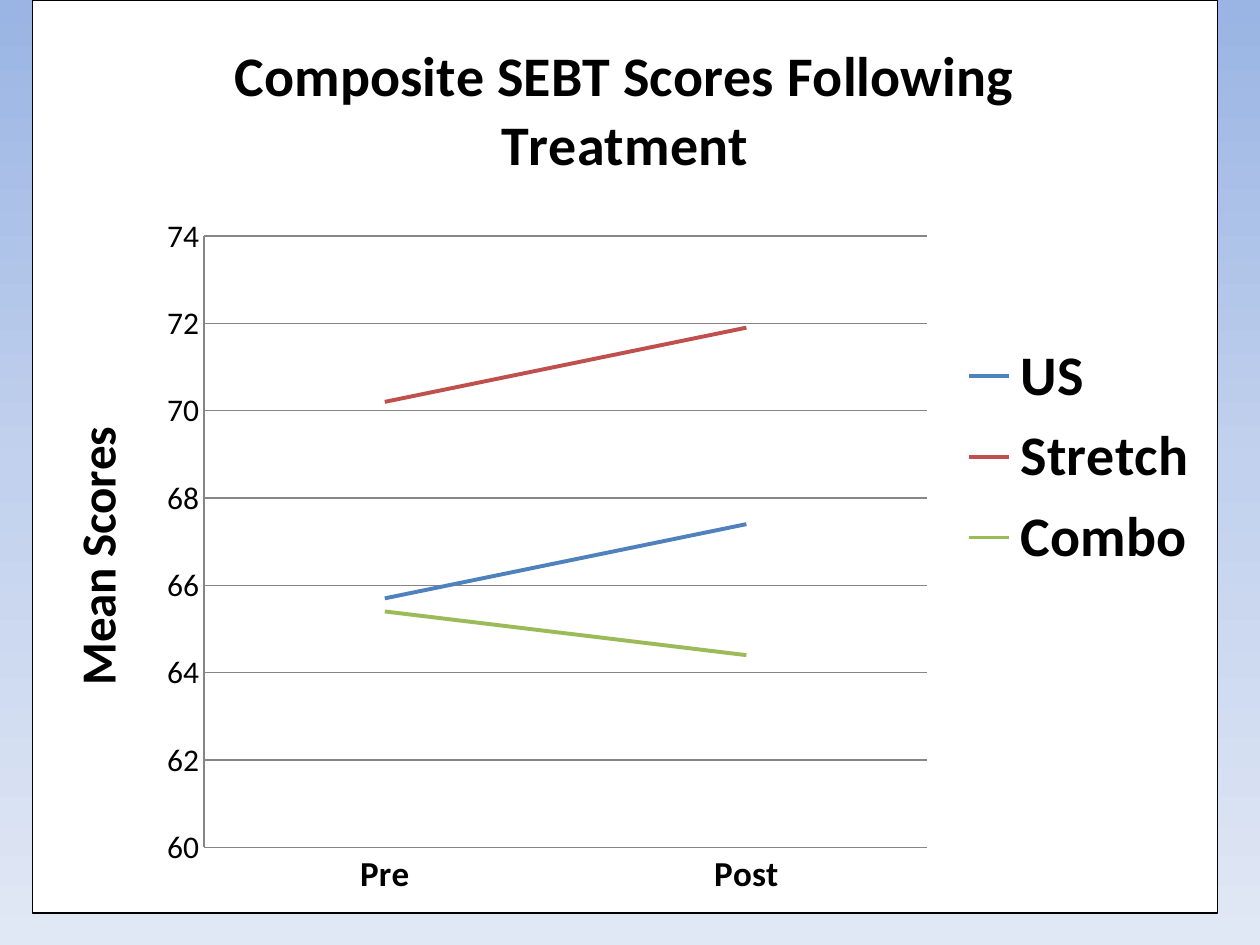
import copy

import lxml.etree
import pptx
import pptx.chart.data
import pptx.dml.color
import pptx.enum.chart
import pptx.oxml
import pptx.oxml.ns
import pptx.util

COLORS = {
    "text": "000000", "panel": "FFFFFF", "grid": "868686",
    "US": "4F81BD", "Stretch": "C0504D", "Combo": "9BBB59",
}
SKY = [(0, "9AB5E4"), (0.5, "C2D1ED"), (1, "E1E8F5")]
SCORES = {"US": (65.7, 67.4), "Stretch": (70.2, 71.9), "Combo": (65.4, 64.4)}
qn = pptx.oxml.ns.qn
rgb = pptx.dml.color.RGBColor.from_string


def write_text(tf, text, size=32, bold=True, color="text"):
    r = tf.paragraphs[0].add_run()
    r.text = text
    style_font(r.font, size, bold, color)


def style_font(font, size, bold=False, color="text"):
    font.name = "Calibri"
    font.size = pptx.util.Pt(size)
    font.bold = bold
    font.color.rgb = rgb(COLORS[color])


prs = pptx.Presentation()
prs.slide_width = pptx.util.Inches(10)
prs.slide_height = pptx.util.Inches(7.5)
W, H = prs.slide_width, prs.slide_height
s = prs.slides.add_slide(prs.slide_layouts[6])

# Background gradient, top to bottom
fill = s.background.fill
fill.gradient()
fill.gradient_angle = 270
stops = next(s._element.iter(qn("a:gsLst")))
stops.insert(1, copy.deepcopy(stops[0]))
for stop, (position, color) in zip(fill.gradient_stops, SKY):
    stop.position = position
    stop.color.rgb = rgb(color)

# Line chart
data = pptx.chart.data.CategoryChartData(number_format="General")
data.categories = ["Pre", "Post"]
for name, values in SCORES.items():
    data.add_series(name, values)
chart = s.shapes.add_chart(
    pptx.enum.chart.XL_CHART_TYPE.LINE,
    int(W * 0.025), 0, int(W * 0.942), int(H * 0.967), data).chart
style_font(chart.font, 10)
for series in chart.plots[0].series:
    series.smooth = False
    series.format.line.width = pptx.util.Pt(2.25)
    series.format.line.color.rgb = rgb(COLORS[series.name])

# Titles
write_text(chart.chart_title.text_frame, "Composite SEBT Scores Following Treatment")
chart.chart_title.include_in_layout = False
write_text(chart.value_axis.axis_title.text_frame, "Mean Scores", size=28)

# Axes
scores = chart.value_axis
scores.minimum_scale, scores.maximum_scale, scores.major_unit = 60, 74, 2
scores.has_major_gridlines = True
for axis, size, bold in ((chart.category_axis, 20, True), (scores, 18, False)):
    axis.major_tick_mark = pptx.enum.chart.XL_TICK_MARK.NONE
    axis.minor_tick_mark = pptx.enum.chart.XL_TICK_MARK.NONE
    style_font(axis.tick_labels.font, size, bold)
for part in (chart.category_axis, scores, scores.major_gridlines):
    part.format.line.width = pptx.util.Pt(0.75)
    part.format.line.color.rgb = rgb(COLORS["grid"])

# Legend
chart.has_legend = True
chart.legend.position = pptx.enum.chart.XL_LEGEND_POSITION.RIGHT
chart.legend.include_in_layout = False
style_font(chart.legend.font, 32, True)

# Plot area, as shares of the chart
space = chart._chartSpace
plot_area = next(space.iter(qn("c:plotArea")))
for old in plot_area.findall(qn("c:layout")):
    plot_area.remove(old)
layout = lxml.etree.Element(qn("c:layout"))
manual = lxml.etree.SubElement(layout, qn("c:manualLayout"))
for tag, value in (("layoutTarget", "inner"), ("xMode", "edge"), ("yMode", "edge"),
                   ("x", "0.145"), ("y", "0.258"), ("w", "0.61"), ("h", "0.67")):
    lxml.etree.SubElement(manual, qn("c:" + tag)).set("val", value)
plot_area.insert(0, layout)

# White panel with a thin square-cornered border
for old in space.findall(qn("c:roundedCorners")):
    space.remove(old)
corners = lxml.etree.Element(qn("c:roundedCorners"))
corners.set("val", "0")
space.find(qn("c:date1904")).addnext(corners)
space.find(qn("c:chart")).addnext(pptx.oxml.parse_xml(
    f'<c:spPr {pptx.oxml.ns.nsdecls("c", "a")}>'
    f'<a:solidFill><a:srgbClr val="{COLORS["panel"]}"/></a:solidFill>'
    f'<a:ln w="{pptx.util.Pt(0.75)}"><a:solidFill>'
    f'<a:srgbClr val="{COLORS["text"]}"/></a:solidFill></a:ln></c:spPr>'))

prs.save("out.pptx")
